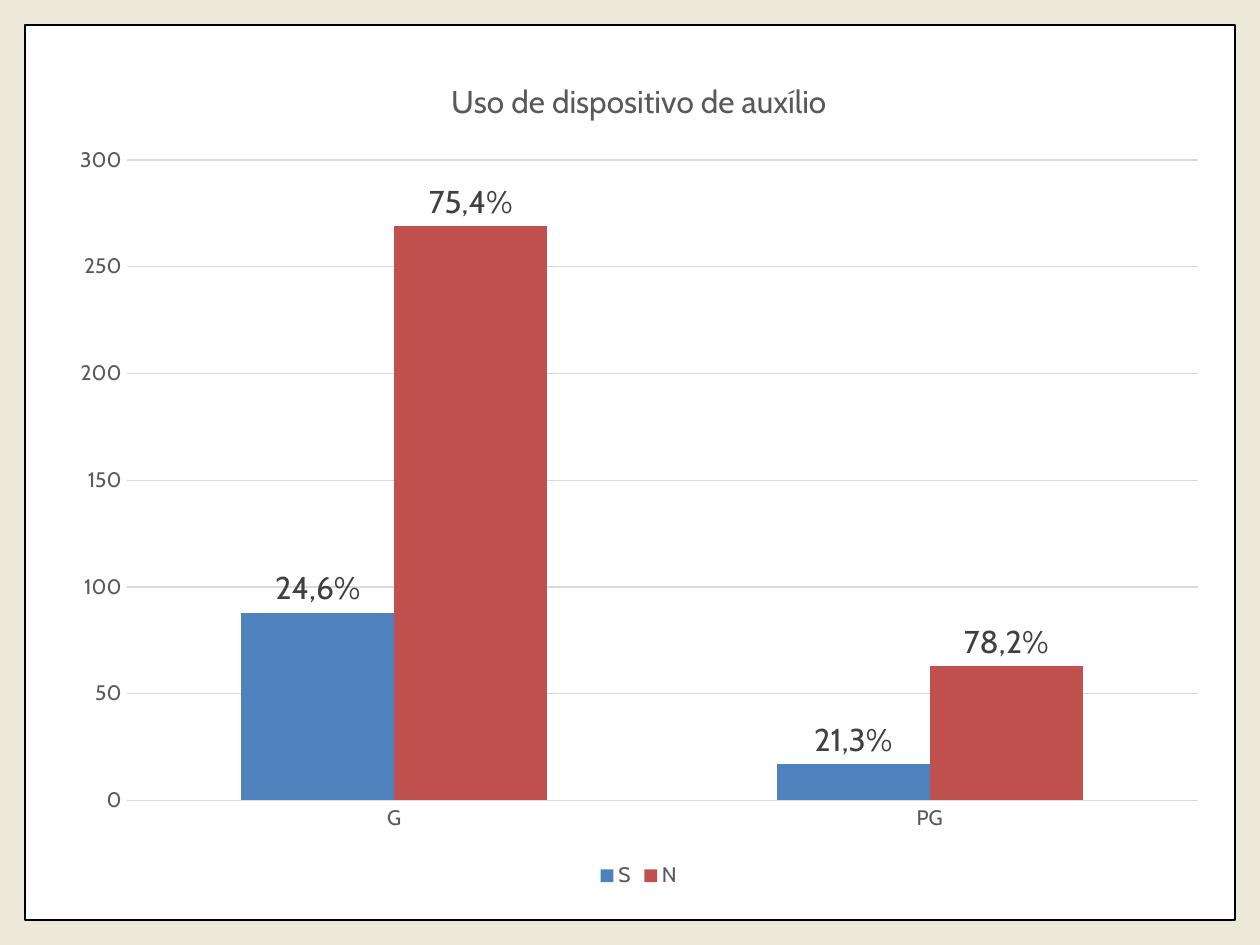
from dataclasses import dataclass

from pptx import Presentation
from pptx import util as u
from pptx.chart import data as chart_data
from pptx.dml import color
from pptx.enum import chart as ec
from pptx.enum import shapes
from pptx.oxml import parse_xml
from pptx.oxml.ns import nsdecls


@dataclass(frozen=True)
class Theme:
    font: str = "Cabin"
    background: str = "ECE9DB"
    panel: str = "FFFFFF"
    border: str = "000000"
    grid: str = "D9D9D9"
    muted: str = "595959"
    label: str = "404040"
    small: int = 12
    large: int = 18
    title: int = 18


@dataclass(frozen=True)
class Answer:
    name: str
    counts: tuple[int, ...]
    shares: tuple[str, ...]
    fill: str


THEME = Theme()
GROUPS = ("G", "PG")
ANSWERS = (
    Answer("S", (88, 17), ("24,6%", "21,3%"), "4F81BD"),
    Answer("N", (269, 63), ("75,4%", "78,2%"), "C0504D"),
)
PLOT_LAYOUT = {"x": 0.06, "y": 0.13, "w": 0.92, "h": 0.76}


def rgb(value: str) -> color.RGBColor:
    return color.RGBColor.from_string(value)


def style_font(font, size: int, tint: str) -> None:
    font.name = THEME.font
    font.size = u.Pt(size)
    font.bold = False
    font.color.rgb = rgb(tint)


def add_run(frame, words: str, size: int, tint: str) -> None:
    run = frame.paragraphs[0].add_run()
    run.text = words
    style_font(run.font, size, tint)


def add_panel(slide) -> None:
    panel = slide.shapes.add_shape(
        shapes.MSO_SHAPE.RECTANGLE, u.Inches(0.2), u.Inches(0.2), u.Inches(9.6), u.Inches(7.1)
    )
    panel.shadow.inherit = False
    panel.fill.solid()
    panel.fill.fore_color.rgb = rgb(THEME.panel)
    panel.line.color.rgb = rgb(THEME.border)
    panel.line.width = u.Pt(1)


def style_axis(axis) -> None:
    axis.major_tick_mark = axis.minor_tick_mark = ec.XL_TICK_MARK.NONE
    axis.format.line.fill.background()
    style_font(axis.tick_labels.font, THEME.small, THEME.muted)


def style_answer(series, answer: Answer) -> None:
    series.format.fill.solid()
    series.format.fill.fore_color.rgb = rgb(answer.fill)
    labels = series.data_labels
    labels.show_value = True
    labels.position = ec.XL_LABEL_POSITION.OUTSIDE_END
    style_font(labels.font, THEME.large, THEME.label)
    for index, share in enumerate(answer.shares):
        label = series.points[index].data_label
        add_run(label.text_frame, share, THEME.large, THEME.label)
        label.position = ec.XL_LABEL_POSITION.OUTSIDE_END


def place_plot(chart) -> None:
    area = chart._chartSpace.chart.plotArea
    for layout in area.xpath("c:layout"):
        area.remove(layout)
    sizes = "".join(f'<c:{side} val="{share}"/>' for side, share in PLOT_LAYOUT.items())
    area.insert(0, parse_xml(
        f'<c:layout {nsdecls("c")}><c:manualLayout><c:layoutTarget val="inner"/>'
        f'<c:xMode val="edge"/><c:yMode val="edge"/>{sizes}</c:manualLayout></c:layout>'
    ))


def add_usage_chart(slide) -> None:
    counts = chart_data.CategoryChartData()
    counts.categories = GROUPS
    for answer in ANSWERS:
        counts.add_series(answer.name, answer.counts)
    chart = slide.shapes.add_chart(
        ec.XL_CHART_TYPE.COLUMN_CLUSTERED,
        u.Inches(0.45), u.Inches(0.4), u.Inches(9.24), u.Inches(6.69), counts,
    ).chart
    style_font(chart.font, 10, THEME.border)
    chart.has_title = True
    add_run(chart.chart_title.text_frame, "Uso de dispositivo de auxílio", THEME.title, THEME.muted)
    chart.chart_title.include_in_layout = False

    chart.has_legend = True
    chart.legend.position = ec.XL_LEGEND_POSITION.BOTTOM
    chart.legend.include_in_layout = False
    style_font(chart.legend.font, THEME.small, THEME.muted)

    style_axis(chart.category_axis)
    scale = chart.value_axis
    style_axis(scale)
    scale.minimum_scale, scale.maximum_scale, scale.major_unit = 0, 300, 50
    scale.has_major_gridlines = True
    scale.major_gridlines.format.line.color.rgb = rgb(THEME.grid)
    scale.major_gridlines.format.line.width = u.Pt(0.75)

    columns = chart.plots[0]
    columns.gap_width = 150
    columns.overlap = 0
    columns.vary_by_categories = False
    for series, answer in zip(columns.series, ANSWERS):
        style_answer(series, answer)
    place_plot(chart)


def main() -> None:
    """Build the slide comparing use of assistive devices by group."""
    deck = Presentation()
    deck.slide_width, deck.slide_height = u.Inches(10), u.Inches(7.5)
    slide = deck.slides.add_slide(deck.slide_layouts[6])
    slide.background.fill.solid()
    slide.background.fill.fore_color.rgb = rgb(THEME.background)
    add_panel(slide)
    add_usage_chart(slide)
    deck.save("out.pptx")


if __name__ == "__main__":
    main()
